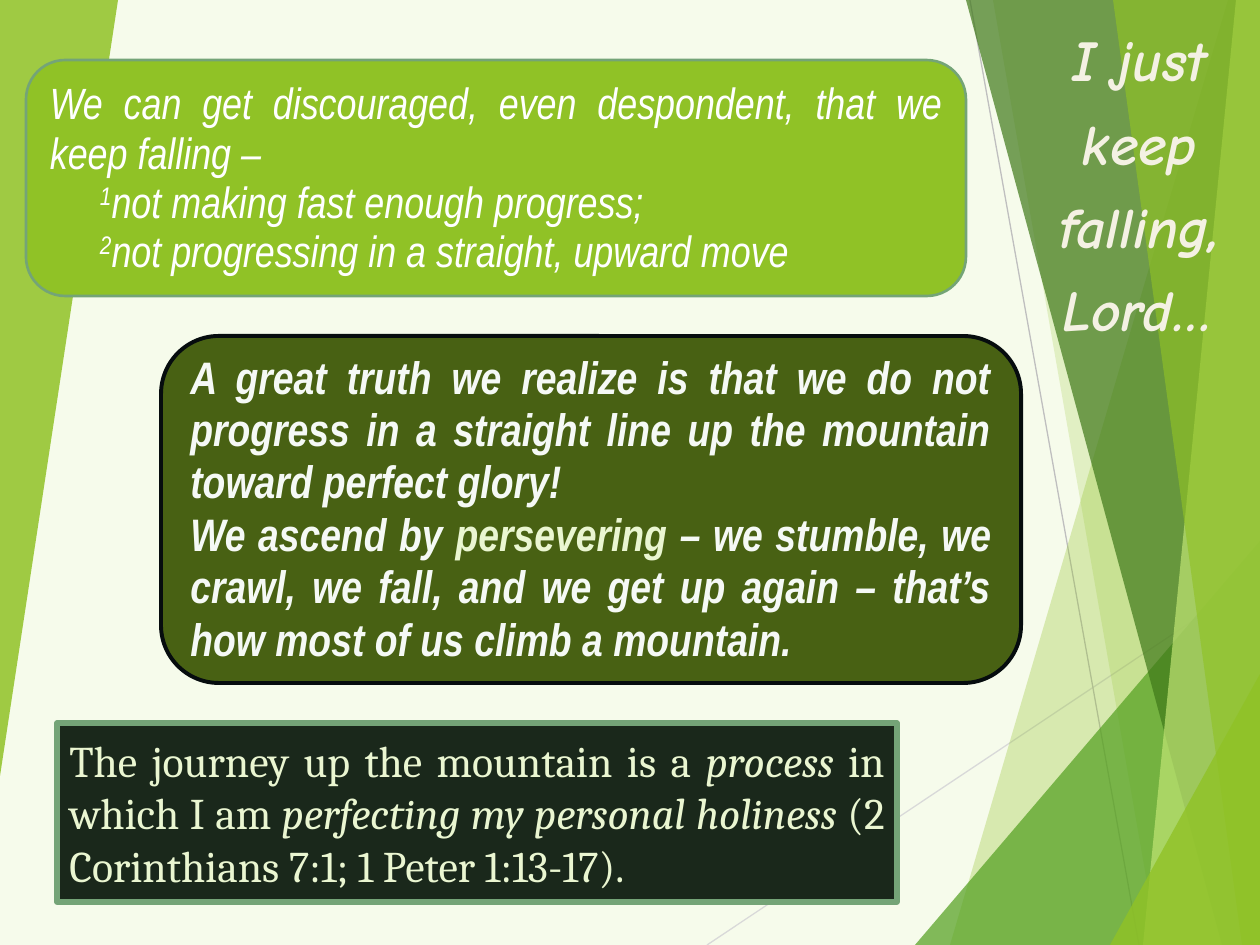
from lxml.etree import SubElement
from pptx import Presentation
from pptx.dml.color import RGBColor
from pptx.enum.shapes import MSO_CONNECTOR as Connector, MSO_SHAPE as Shape
from pptx.enum.text import MSO_ANCHOR as Anchor, MSO_AUTO_SIZE as AutoSize, PP_ALIGN as Align
from pptx.oxml.ns import qn
from pptx.util import Pt

SCALE = 914400 / 126
WIDTH, HEIGHT = 1260, 945

PAPER = RGBColor(0xF6, 0xFB, 0xEB)
LIME = RGBColor(0x90, 0xC2, 0x26)
LEAF = RGBColor(0x54, 0xA0, 0x21)
FOREST = RGBColor(0x3F, 0x78, 0x19)
PALE_LIME = RGBColor(0xC0, 0xE4, 0x74)
SAGE = RGBColor(0x74, 0xA4, 0x77)
MOSS = RGBColor(0x48, 0x61, 0x13)
PINE = RGBColor(0x1A, 0x28, 0x1B)
INK = RGBColor(0x06, 0x0C, 0x0E)
WHITE = RGBColor(0xFF, 0xFF, 0xFF)
MIST = RGBColor(0xF5, 0xF9, 0xF5)
PALE_GREEN = RGBColor(0xEA, 0xF6, 0xD1)
CREAM = RGBColor(0xF4, 0xF1, 0xE3)
LIGHT_GREY = RGBColor(0xD9, 0xD9, 0xD9)
GREY = RGBColor(0xBF, 0xBF, 0xBF)

RAYS = [
    ((707, 945), (1260, 576), LIGHT_GREY),
    ((970, 0), (1139, 945), GREY),
]

RIGHT_SIDE = [(WIDTH, HEIGHT), (WIDTH, 0)]
RIGHT_CORNER = [(WIDTH, HEIGHT)]
LEFT_CORNER = [(0, 0)]
FACETS = [
    ((1228, 0), (950, 945), RIGHT_SIDE, LIME, 30),
    ((993, 0), (1158, 945), RIGHT_SIDE, LIME, 20),
    ((915, 945), (1260, 541), RIGHT_CORNER, LEAF, 72),
    ((966, 0), (1222, 945), RIGHT_SIDE, FOREST, 70),
    ((1236, 0), (1143, 945), RIGHT_SIDE, PALE_LIME, 70),
    ((1113, 0), (1242, 945), RIGHT_SIDE, LIME, 65),
    ((1110, 945), (1260, 674), RIGHT_CORNER, LIME, 80),
    ((118, 0), (0, 776), LEFT_CORNER, LIME, 85),
]

ITALIC = {"italic": True}
RAISED = {"baseline": 30}
TITLE = [[(word, {})] for word in ("I just", "keep", "falling,", "Lord…")]
DISCOURAGED = [[("We can get discouraged, even despondent, that we keep falling –", {})]]
REASONS = [
    [("1", RAISED), ("not making fast enough progress;", {})],
    [("2", RAISED), ("not progressing in a straight, upward move", {})],
]
TRUTH = [
    [("A great truth we realize is that we do not progress in a straight line "
      "up the mountain toward perfect glory!", {})],
    [("We ascend by ", {}), ("persevering", {"color": PALE_GREEN}),
     (" – we stumble, we crawl, we fall, and we get up again – that’s how most "
      "of us climb a mountain.", {})],
]
JOURNEY = [
    [("The journey up the mountain is a ", {}), ("process ", ITALIC),
     ("in which I am ", {}), ("perfecting my personal holiness ", ITALIC),
     ("(2 Corinthians 7:1; 1 Peter 1:13-17).", {})],
]

NARROW = {"font": "Arial Narrow", "italic": True}
NOTE = {**NARROW, "size": 25, "color": WHITE}
PANELS = [
    (Shape.ROUNDED_RECTANGLE, (26, 60, 940, 236), LIME, SAGE, 1.5,
     [(DISCOURAGED, {**NOTE, "spacing": 0.96}),
      (REASONS, {**NOTE, "spacing": 0.93, "indent": 50})]),
    (Shape.RECTANGLE, (57, 723, 840, 179), PINE, SAGE, 3,
     [(JOURNEY, {"font": "Cambria", "size": 25, "color": PALE_GREEN})]),
    (Shape.ROUNDED_RECTANGLE, (161, 336, 860, 347), MOSS, INK, 2.25,
     [(TRUTH, {**NARROW, "size": 26, "color": MIST, "bold": True, "spacing": 0.96})]),
]


def emu(*lengths):
    return [round(length * SCALE) for length in lengths]


def style_run(run, font, size, color, bold=False, italic=False, baseline=0):
    run.font.name = font
    run.font.size = Pt(size)
    run.font.color.rgb = color
    run.font.bold = bold
    run.font.italic = italic
    if baseline:
        run._r.get_or_add_rPr().set("baseline", str(baseline * 1000))


def write(frame, paragraphs, align=Align.JUSTIFY, spacing=1.0, indent=0, **style):
    for runs in paragraphs:
        first = frame.paragraphs[0]
        paragraph = first if not first.runs else frame.add_paragraph()
        paragraph.alignment = align
        paragraph.line_spacing = spacing
        if indent:
            paragraph._p.get_or_add_pPr().set("marL", str(emu(indent)[0]))
        for words, changes in runs:
            run = paragraph.add_run()
            run.text = words
            style_run(run, **{**style, **changes})


def draw_ray(shapes, start, end, color):
    ray = shapes.add_connector(Connector.STRAIGHT, *emu(*start, *end))
    ray.line.color.rgb = color
    ray.line.width = Pt(0.75)
    SubElement(ray._element.spPr, qn("a:effectLst"))


def draw_facet(shapes, start, end, corners, color, opacity):
    builder = shapes.build_freeform(*start, scale=SCALE)
    builder.add_line_segments([end, *corners], close=True)
    facet = builder.convert_to_shape()
    facet.shadow.inherit = False
    facet.line.fill.background()
    facet.fill.solid()
    facet.fill.fore_color.rgb = color
    tint = facet._element.spPr.find(qn("a:solidFill")).find(qn("a:srgbClr"))
    SubElement(tint, qn("a:alpha"), val=str(opacity * 1000))


def draw_panel(shapes, outline, box, fill, border, weight, texts):
    panel = shapes.add_shape(outline, *emu(*box))
    panel.shadow.inherit = False
    panel.fill.solid()
    panel.fill.fore_color.rgb = fill
    panel.line.color.rgb = border
    panel.line.width = Pt(weight)
    panel.text_frame.word_wrap = True
    panel.text_frame.vertical_anchor = Anchor.MIDDLE
    for paragraphs, style in texts:
        write(panel.text_frame, paragraphs, **style)


def place_title(shapes):
    title = shapes.title
    title.left, title.top, title.width, title.height = emu(1021, 4, 237, 352)
    frame = title.text_frame
    frame.word_wrap = True
    frame.auto_size = AutoSize.NONE
    frame.vertical_anchor = Anchor.TOP
    write(frame, TITLE, align=Align.CENTER, spacing=1.2, font="Comic Neue",
          size=33, color=CREAM, bold=True, italic=True)
    shapes._spTree.append(title._element)


def main():
    deck = Presentation()
    deck.slide_width, deck.slide_height = emu(WIDTH, HEIGHT)
    slide = deck.slides.add_slide(deck.slide_layouts[5])
    slide.background.fill.solid()
    slide.background.fill.fore_color.rgb = PAPER
    for ray in RAYS:
        draw_ray(slide.shapes, *ray)
    for facet in FACETS:
        draw_facet(slide.shapes, *facet)
    for panel in PANELS:
        draw_panel(slide.shapes, *panel)
    place_title(slide.shapes)
    deck.save("out.pptx")


if __name__ == "__main__":
    main()
